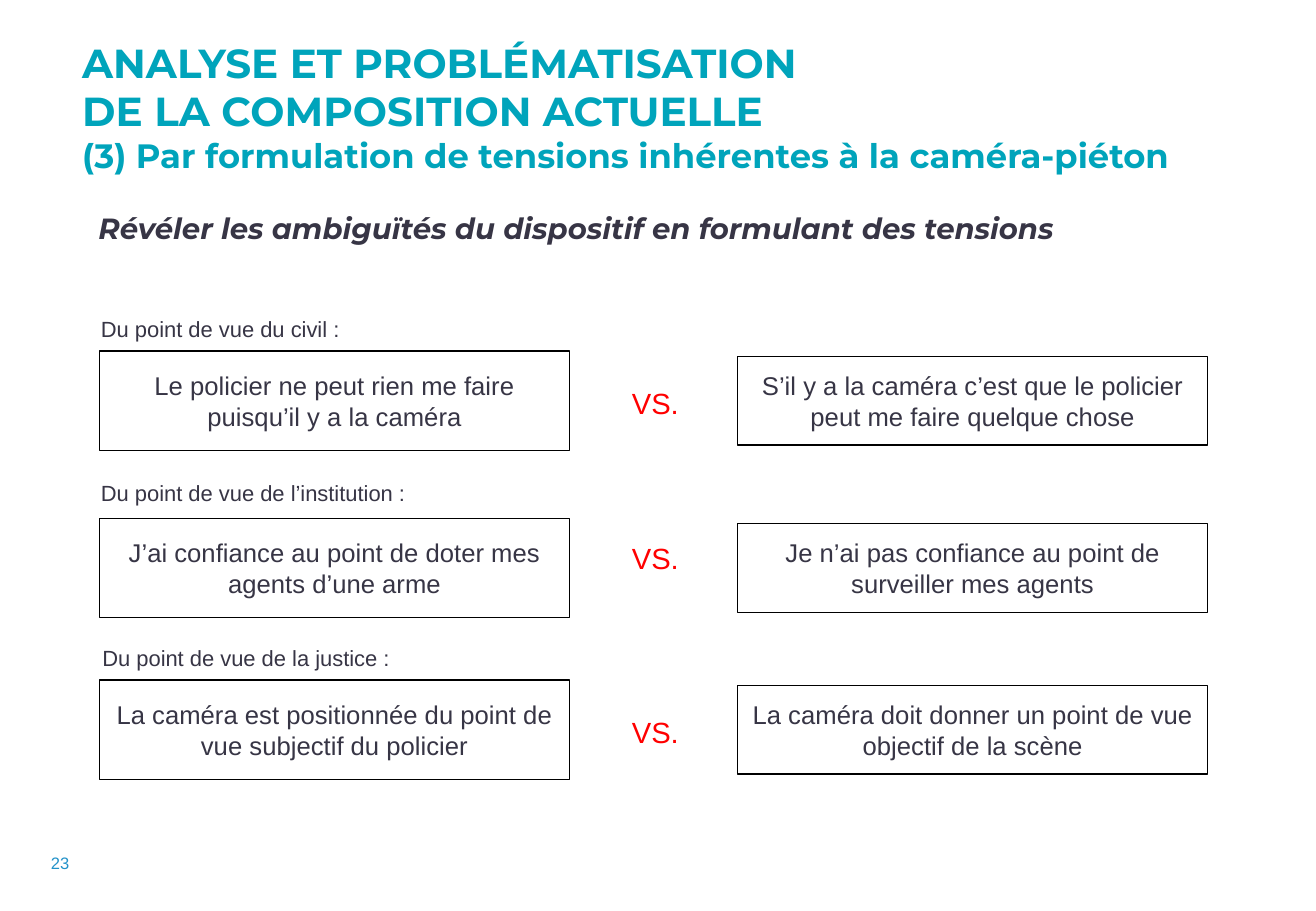
from pptx import Presentation
from pptx.dml.color import RGBColor
from pptx.enum import shapes, text
from pptx.util import Cm, Pt

TEAL = RGBColor(0x00, 0xA4, 0xBB)
BLUE = RGBColor(0x23, 0x92, 0xC9)
DARK = RGBColor(0x37, 0x35, 0x45)
RED = RGBColor(0xFF, 0x00, 0x00)
BLACK = RGBColor(0x00, 0x00, 0x00)

LEFT_X, VERSUS_X, RIGHT_X = 2.08, 12.93, 15.42
BOX_WIDTH, LEFT_HEIGHT, RIGHT_HEIGHT = 9.83, 2.08, 1.85

# Label, label place, left statement and its top, right statement, top of "VS."
TENSIONS = [
    ("Du point de vue du civil :", 1.83, 6.32,
     "Le policier ne peut rien me faire puisqu’il y a la caméra", 7.34,
     "S’il y a la caméra c’est que le policier peut me faire quelque chose", 7.77),
    ("Du point de vue de l’institution :", 1.83, 9.75,
     "J’ai confiance au point de doter mes agents d’une arme", 10.84,
     "Je n’ai pas confiance au point de surveiller mes agents", 11.02),
    ("Du point de vue de la justice :", 1.86, 13.21,
     "La caméra est positionnée du point de vue subjectif du policier", 14.22,
     "La caméra doit donner un point de vue objectif de la scène", 14.66),
]


class SlideBuilder:
    def __init__(self, slide, font="Arial", heading_font="Montserrat", inset=0.28):
        self.slide = slide
        self.font = font
        self.heading_font = heading_font
        self.inset = inset

    def set_font(self, paragraph, size, color, heading=False, italic=False):
        font = paragraph.font
        font.name = self.heading_font if heading else self.font
        font.size = Pt(size)
        font.bold = heading
        font.italic = italic
        font.color.rgb = color

    def prepare_frame(self, shape, insets=None, middle=False):
        frame = shape.text_frame
        frame.word_wrap = True
        frame.vertical_anchor = text.MSO_ANCHOR.MIDDLE if middle else text.MSO_ANCHOR.TOP
        left, top, right, bottom = insets or [self.inset] * 4
        frame.margin_left, frame.margin_top = Cm(left), Cm(top)
        frame.margin_right, frame.margin_bottom = Cm(right), Cm(bottom)
        return frame

    def add_frame(self, left, top, width, height, insets=None, middle=False):
        shape = self.slide.shapes.add_textbox(Cm(left), Cm(top), Cm(width), Cm(height))
        return self.prepare_frame(shape, insets, middle)

    def add_text(self, content, place, size, color, insets=None, middle=False, **style):
        paragraph = self.add_frame(*place, insets, middle).paragraphs[0]
        paragraph.text = content
        self.set_font(paragraph, size, color, **style)
        return paragraph

    def add_title(self, first_line, second_line, subtitle, place):
        frame = self.add_frame(*place, (0.25, 0, 0.25, 0))
        paragraph = frame.paragraphs[0]
        paragraph.text = first_line
        self.set_font(paragraph, 24, TEAL, heading=True)
        paragraph = frame.add_paragraph()
        self.set_font(paragraph, 24, TEAL, heading=True)
        paragraph.add_run().text = second_line
        paragraph.add_line_break()
        run = paragraph.add_run()
        run.text = subtitle
        run.font.size = Pt(20)

    def add_statement(self, content, left, top, height):
        shape = self.slide.shapes.add_shape(
            shapes.MSO_SHAPE.RECTANGLE, Cm(left), Cm(top), Cm(BOX_WIDTH), Cm(height))
        shape.shadow.inherit = False
        shape.fill.background()
        shape.line.color.rgb = BLACK
        shape.line.width = Pt(0.75)
        paragraph = self.prepare_frame(shape, middle=True).paragraphs[0]
        paragraph.text = content
        paragraph.alignment = text.PP_ALIGN.CENTER
        self.set_font(paragraph, 15.2, DARK)


def main():
    presentation = Presentation()
    presentation.slide_width, presentation.slide_height = Cm(27.51), Cm(19.05)
    builder = SlideBuilder(presentation.slides.add_slide(presentation.slide_layouts[6]))

    # Heading
    builder.add_title(
        "ANALYSE ET PROBLÉMATISATION", "DE LA COMPOSITION ACTUELLE",
        "(3) Par formulation de tensions inhérentes à la caméra-piéton",
        (1.47, 0.79, 24.26, 3.71))
    lead = builder.add_text(
        "Révéler les ambiguïtés du dispositif en formulant des tensions",
        (1.78, 4.01, 20.93, 1.45), 17.3, DARK, heading=True, italic=True)
    lead.line_spacing = 1.15
    lead.space_after = Pt(10.8)

    # Opposed statements, the right box centred on the left one
    for label, label_x, label_y, left_text, box_y, right_text, versus_y in TENSIONS:
        builder.add_text(label, (label_x, label_y, 10.46, 1.02), 13, DARK)
        builder.add_statement(left_text, LEFT_X, box_y, LEFT_HEIGHT)
        builder.add_text("VS.", (VERSUS_X, versus_y, 1.65, 1.24), 17.3, RED)
        right_y = box_y + (LEFT_HEIGHT - RIGHT_HEIGHT) / 2
        builder.add_statement(right_text, RIGHT_X, right_y, RIGHT_HEIGHT)

    # Page number
    number = builder.add_text("23", (0.36, 17.7, 1.09, 0.69), 9.8, BLUE,
                              insets=(0.25, 0.13, 0, 0.13), middle=True)
    number.alignment = text.PP_ALIGN.RIGHT

    presentation.save("out.pptx")


if __name__ == "__main__":
    main()
